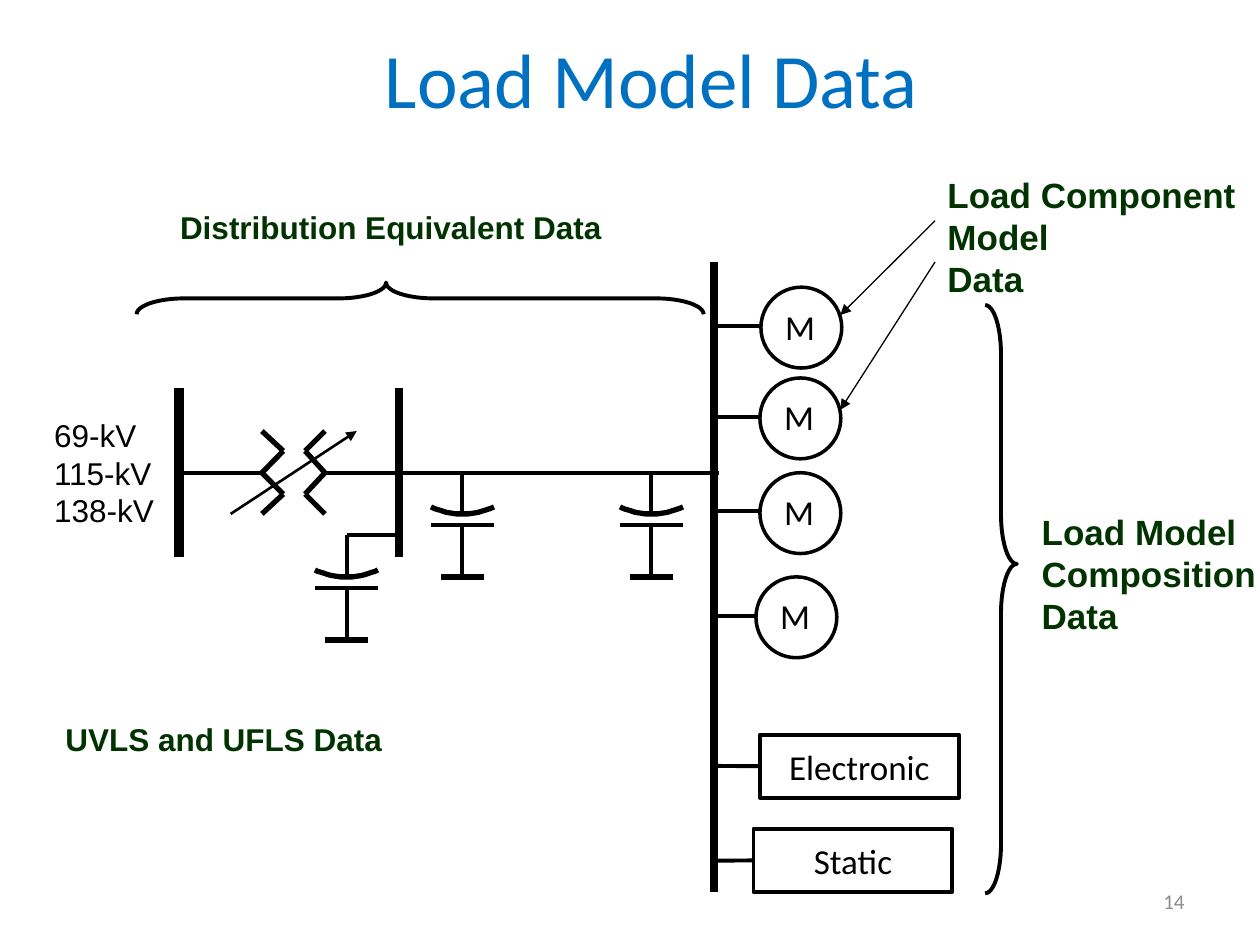
from pptx import Presentation
from pptx.dml.color import RGBColor as Rgb
from pptx.enum.shapes import MSO_CONNECTOR as Link, MSO_SHAPE as Kind
from pptx.enum.text import MSO_ANCHOR as Anchor, MSO_AUTO_SIZE as Size, PP_ALIGN as Align
from pptx.oxml.ns import qn
from pptx.util import Cm, Pt
from lxml.etree import SubElement

UNIT = 2.54
HUE = {"title": "0070C0", "note": "003300", "ink": "000000", "page": "8C8C8C"}

TITLE = "Load Model Data"
NOTES = [
    (["Load Model", "Composition", "Data"], (8.17, 4, 1.92, 1.11), 20, True, "note", False),
    (["Load Component", "Model", "Data"], (7.42, 1.33, 2.51, 1.11), 20, True, "note", False),
    (["Distribution Equivalent Data"], (1.33, 1.6, 3.58, 0.4), 18, True, "note", True),
    (["UVLS and UFLS Data"], (0.42, 5.67, 2.83, 0.4), 18, True, "note", True),
    (["69-kV", "115-kV", "138-kV"], (0.33, 3.25, 1, 1.01), 18, False, "ink", False),
]
PAGE = "14"
BUS = 5.67
WIRES = [
    (1.42, 3.08, 1.42, 4.42, 6),
    (BUS, 2.08, BUS, 7.08, 4.5),
    (3.17, 3.08, 3.17, 4.42, 4.5),
    (2.58, 3.75, 5.71, 3.75, 2.25),
    (1.44, 3.75, 2.08, 3.75, 2.25),
    (2.75, 4.25, 3.17, 4.25, 2.25),
]
ARROWS = [
    (7.42, 1.75, 6.67, 2.5, 0.75),
    (7.42, 2.08, 6.67, 3.25, 0.75),
    (1.83, 4.08, 2.83, 3.42, 1.5),
]
COILS = [(2.08, 2.25), (2.58, 2.42)]
STEPS = [3.42, 3.58, 3.75, 3.92, 4.08]
CAPS = [(3.67, 3.75), (5.17, 3.75), (2.75, 4.25)]
MOTORS = [(6.04, 2.28), (6.03, 3), (6.03, 3.75), (6, 4.58)]
LOADS = [("Electronic", 6.03, 5.83), ("Static", 5.98, 6.58)]
BRACES = [((7.82, 2.42, 0.25, 4.67), 0, 1.56), ((3.21, 0.12, 0.25, 4.5), 270, 1.5)]

deck = Presentation()
deck.slide_width, deck.slide_height = Cm(10 * UNIT), Cm(7.5 * UNIT)
slide = deck.slides.add_slide(deck.slide_layouts[5])
shapes = slide.shapes


def span(*vals):
    return [Cm(round(v * UNIT, 2)) for v in vals]


def style(item, **vals):
    for key, val in vals.items():
        setattr(item, key, val)


def ink(item, width):
    item.line.color.rgb = Rgb.from_string(HUE["ink"])
    item.line.width = Pt(width)


def write(item, rows, size, hue, face="Calibri", bold=False, align=Align.LEFT, **body):
    frame = item.text_frame
    frame.text = "\n".join(rows)
    style(frame, **body)
    for para in frame.paragraphs:
        para.alignment = align
        style(para.font, size=Pt(size), name=face, bold=bold)
        para.font.color.rgb = Rgb.from_string(HUE[hue])


def wire(x1, y1, x2, y2, width, tip=False):
    link = shapes.add_connector(Link.STRAIGHT, *span(x1, y1, x2, y2))
    ink(link, width)
    props = link._element.spPr
    if tip:
        SubElement(props.find(qn("a:ln")), qn("a:tailEnd"), type="triangle")
    SubElement(props, qn("a:effectLst"))
    return link


def form(kind, box, width):
    item = shapes.add_shape(kind, *span(*box))
    item.shadow.inherit = False
    item.fill.background()
    ink(item, width)
    return item


def cap(x, y):
    wire(x, y, x, y + 0.33, 2.25)
    wire(x, y + 0.42, x, y + 0.83, 2.25)
    wire(x - 0.17, y + 0.83, x + 0.17, y + 0.83, 3)
    wire(x - 0.25, y + 0.42, x + 0.25, y + 0.42, 2.25)
    curve = [span(x + n / 40, y + 0.33 - 0.055 * (n / 10) ** 2) for n in range(-10, 11)]
    pen = shapes.build_freeform(*curve[0])
    pen.add_line_segments(curve[1:], close=False)
    plate = pen.convert_to_shape()
    plate.shadow.inherit = False
    plate.fill.background()
    ink(plate, 3)


head = shapes.title
style(head, **dict(zip(("left", "top", "width", "height"), span(0.92, 0.08, 8.5, 1.08))))
write(head, [TITLE], 44, "title", align=Align.CENTER, vertical_anchor=Anchor.MIDDLE)

for row in WIRES:
    wire(*row)
for row in ARROWS:
    wire(*row, tip=True)
for edge, peak in COILS:
    xs = [edge, peak, edge, peak, edge]
    for n in range(4):
        wire(xs[n], STEPS[n], xs[n + 1], STEPS[n + 1], 3)
for spot in CAPS:
    cap(*spot)

for x, y in MOTORS:
    wire(BUS, y + 0.31, x, y + 0.31, 2.25)
    motor = form(Kind.OVAL, (x, y, 0.64, 0.64), 2)
    write(motor, ["M"], 20, "ink", vertical_anchor=Anchor.TOP, word_wrap=True)

for name, x, y in LOADS:
    load = form(Kind.RECTANGLE, (x, y, 1.58, 0.5), 2.25)
    write(load, [name], 20, "ink", align=Align.CENTER,
          vertical_anchor=Anchor.MIDDLE, word_wrap=False)
    wire(BUS, y + 0.25, x, y + 0.25, 2.25).end_connect(load, 1)

for box, turn, bend in BRACES:
    brace = form(Kind.RIGHT_BRACE, box, 2.25)
    brace.rotation = turn
    brace.adjustments[0], brace.adjustments[1] = bend, 0.44

for rows, box, size, bold, hue, wrap in NOTES:
    write(shapes.add_textbox(*span(*box)), rows, size, hue, "Arial", bold,
          word_wrap=wrap, auto_size=Size.SHAPE_TO_FIT_TEXT)

write(shapes.add_textbox(*span(7.17, 6.95, 2.33, 0.4)), [PAGE], 12, "page",
      align=Align.RIGHT, vertical_anchor=Anchor.MIDDLE, word_wrap=True)

deck.save("out.pptx")
